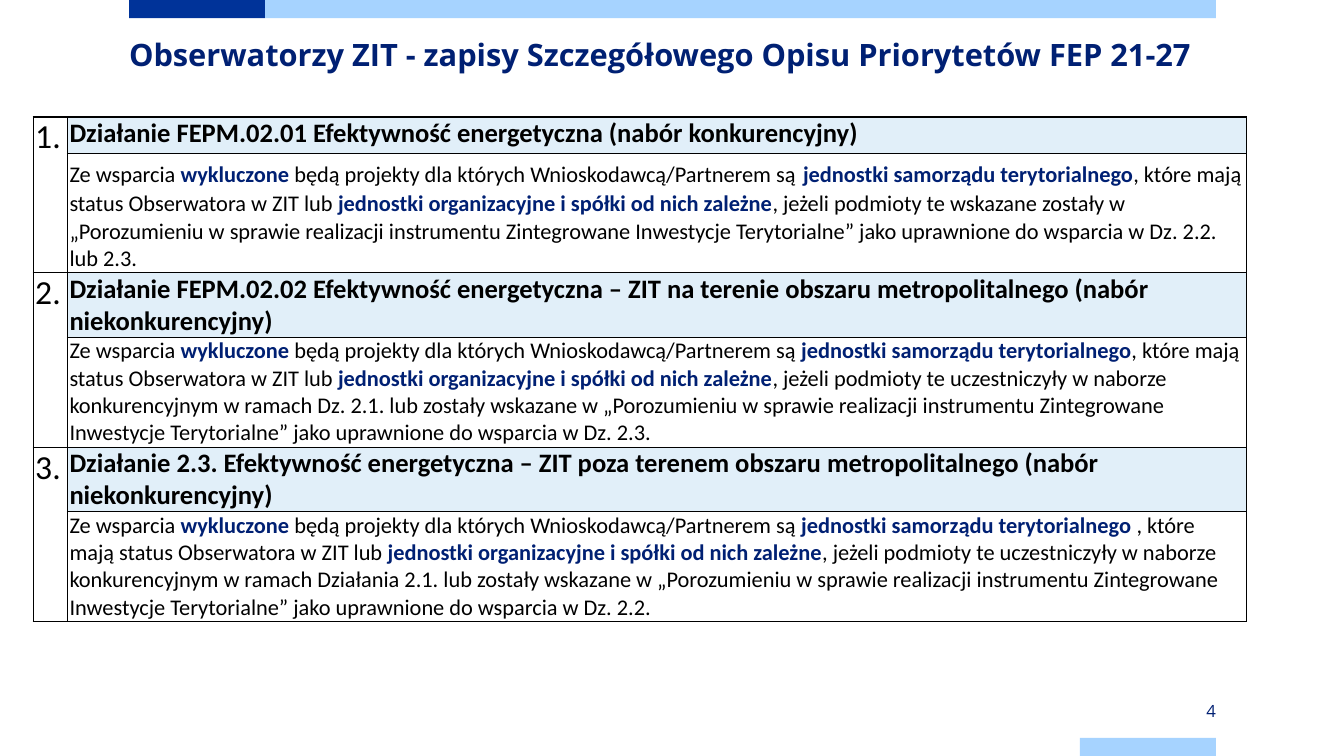
from lxml.etree import SubElement
from pptx import Presentation
from pptx.dml.color import RGBColor
from pptx.enum.shapes import MSO_SHAPE as Preset
from pptx.enum.text import MSO_ANCHOR as Anchor, MSO_AUTO_SIZE as AutoSize, PP_ALIGN as Align
from pptx.oxml.ns import qn
from pptx.util import Inches, Pt

COLORS = {"navy": "002073", "blue": "003399", "sky": "A6D3FF",
          "pale": "E1EFF9", "black": "000000"}

# Grid: eight columns between the page margins
LEFT, COLUMN, COLUMNS, BAR = 1.28, 1.35, 8, 0.18
WIDTH, HEIGHT = 13.33, 7.5
LAST = LEFT + (COLUMNS - 1) * COLUMN - 0.02

# Text between bars is emphasised
ACTIONS = [
    ("Działanie FEPM.02.01 Efektywność energetyczna (nabór konkurencyjny)",
     "Ze wsparcia |wykluczone| będą projekty dla których Wnioskodawcą/Partnerem są| ||"
     "jednostki samorządu terytorialnego|, które mają status Obserwatora w ZIT lub |"
     "jednostki organizacyjne i spółki od nich zależne|, jeżeli podmioty te wskazane zostały "
     "w „Porozumieniu w sprawie realizacji instrumentu Zintegrowane Inwestycje "
     "Terytorialne” jako uprawnione do wsparcia w Dz. 2.2. lub 2.3."),
    ("Działanie FEPM.02.02 Efektywność energetyczna – ZIT na terenie obszaru "
     "metropolitalnego (nabór niekonkurencyjny)",
     "Ze wsparcia |wykluczone| będą projekty dla których Wnioskodawcą/Partnerem są |"
     "jednostki samorządu terytorialnego|, które mają status Obserwatora w ZIT lub |"
     "jednostki organizacyjne i spółki od nich zależne|, jeżeli podmioty te uczestniczyły "
     "w naborze konkurencyjnym w ramach Dz. 2.1. lub zostały wskazane w „Porozumieniu "
     "w sprawie realizacji instrumentu Zintegrowane Inwestycje Terytorialne” jako "
     "uprawnione do wsparcia w Dz. 2.3."),
    ("Działanie 2.3. Efektywność energetyczna – ZIT poza terenem obszaru "
     "metropolitalnego (nabór niekonkurencyjny)",
     "Ze wsparcia |wykluczone| będą projekty dla których Wnioskodawcą/Partnerem są |"
     "jednostki samorządu terytorialnego| , które mają status Obserwatora w ZIT lub |"
     "jednostki organizacyjne i spółki od nich zależne|, jeżeli podmioty te uczestniczyły "
     "w naborze konkurencyjnym w ramach Działania 2.1. lub zostały wskazane w "
     "„Porozumieniu w sprawie realizacji instrumentu Zintegrowane Inwestycje "
     "Terytorialne” jako uprawnione do wsparcia w Dz. 2.2."),
]
ROW_HEIGHTS = [0.36, 1.18, 0.64, 1.09, 0.64, 1.09]


def add_run(paragraph, text, size, color="black", bold=False, name="Calibri"):
    run = paragraph.add_run()
    run.text = text
    for key, value in {"size": Pt(size), "bold": bold, "name": name}.items():
        setattr(run.font, key, value)
    run.font.color.rgb = RGBColor.from_string(COLORS[color])


def format_cell(cell, fill=None):
    margins = {"margin_left": 0.02, "margin_right": 0.02, "margin_top": 0, "margin_bottom": 0}
    for key, value in margins.items():
        setattr(cell, key, Inches(value))
    properties = cell._tc.get_or_add_tcPr()
    for side in ("lnL", "lnR", "lnT", "lnB"):
        line = SubElement(properties, qn(f"a:{side}"), w=str(Pt(1)))
        SubElement(SubElement(line, qn("a:solidFill")), qn("a:srgbClr"), val=COLORS["black"])
    if fill:
        cell.fill.solid()
        cell.fill.fore_color.rgb = RGBColor.from_string(COLORS[fill])
    else:
        cell.fill.background()


presentation = Presentation()
presentation.slide_width, presentation.slide_height = Inches(WIDTH), Inches(HEIGHT)
slide = presentation.slides.add_slide(presentation.slide_layouts[5])

# Bars at the top and bottom edges
for left, top, width, color in [
    (LEFT, 0, COLUMN, "blue"),
    (LEFT + COLUMN, 0, (COLUMNS - 1) * COLUMN - 0.02, "sky"),
    (LAST, HEIGHT - BAR, COLUMN, "sky"),
]:
    bar = slide.shapes.add_shape(Preset.RECTANGLE, *map(Inches, (left, top, width, BAR)))
    bar.shadow.inherit = False
    bar.fill.solid()
    bar.fill.fore_color.rgb = RGBColor.from_string(COLORS[color])
    bar.line.fill.background()

# Title and page number
title = slide.shapes.title
title.left, title.top, title.width, title.height = map(Inches, (LEFT, 0.24, 10.78, 0.5))
number = slide.shapes.add_textbox(*map(Inches, (LAST, 6.96, COLUMN, BAR)))
for shape, text, size, bold, align, side_margin in [
    (title, "Obserwatorzy ZIT - zapisy Szczegółowego Opisu Priorytetów FEP 21-27",
     22, True, Align.LEFT, 0),
    (number, "4", 12, False, Align.RIGHT, 0),
]:
    frame = shape.text_frame
    settings = {"margin_left": 0, "margin_right": 0, "margin_top": 0, "margin_bottom": 0,
                "word_wrap": True, "auto_size": AutoSize.NONE, "vertical_anchor": Anchor.MIDDLE}
    for key, value in settings.items():
        setattr(frame, key, value)
    frame.paragraphs[0].alignment = align
    add_run(frame.paragraphs[0], text, size, "navy", bold, "Open Sans")
title.text_frame.paragraphs[0].line_spacing = Pt(32.7)

# Table: a number beside a heading row and a description row
table = slide.shapes.add_table(
    2 * len(ACTIONS), 2, *map(Inches, (0.33, 1.16, 12.03, sum(ROW_HEIGHTS)))).table
table.first_row = table.horz_banding = False
for column, width in zip(table.columns, (0.34, 11.69)):
    column.width = Inches(width)
for row, height in zip(table.rows, ROW_HEIGHTS):
    row.height = Inches(height)

for index, (heading, description) in enumerate(ACTIONS):
    top, bottom = 2 * index, 2 * index + 1
    for row in (top, bottom):
        format_cell(table.cell(row, 0))
    table.cell(top, 0).merge(table.cell(bottom, 0))
    add_run(table.cell(top, 0).text_frame.paragraphs[0], f"{index + 1}.", 24)

    format_cell(table.cell(top, 1), "pale")
    add_run(table.cell(top, 1).text_frame.paragraphs[0], heading, 19, bold=True)

    format_cell(table.cell(bottom, 1))
    paragraph = table.cell(bottom, 1).text_frame.paragraphs[0]
    for position, piece in enumerate(description.split("|")):
        if piece:
            strong = position % 2 == 1
            add_run(paragraph, piece, 22 if piece == " " else 16,
                    "navy" if strong else "black", strong)

presentation.save("out.pptx")
